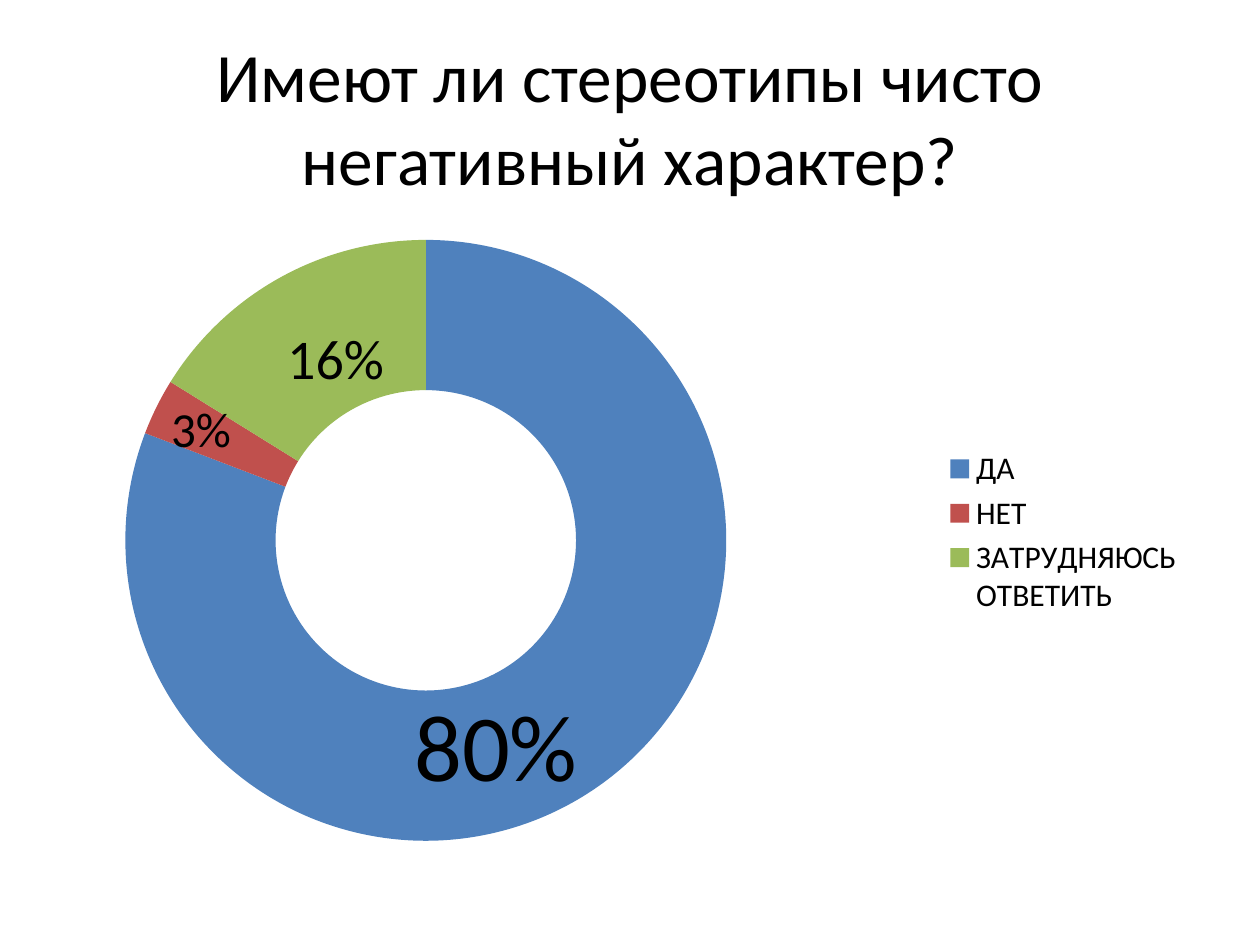
import dataclasses

import pptx
import pptx.chart.data
import pptx.dml.color
import pptx.enum.chart
import pptx.enum.text
import pptx.oxml
import pptx.oxml.ns
import pptx.util

Pt = pptx.util.Pt
RGB = pptx.dml.color.RGBColor.from_string


@dataclasses.dataclass(frozen=True)
class Theme:
    font: str = "Calibri"
    ink: str = "000000"
    yes: str = "4F81BD"
    no: str = "C0504D"
    unsure: str = "9BBB59"
    title_size: float = 39.6
    legend_size: float = 18
    yes_size: float = 54
    no_size: float = 28
    unsure_size: float = 32


@dataclasses.dataclass(frozen=True)
class Box:
    left: float
    top: float
    width: float
    height: float

    def inner(self, left, top, width, height):
        return Box(self.left + left, self.top + top, width, height)

    def lengths(self):
        return [Pt(v) for v in (self.left, self.top, self.width, self.height)]


@dataclasses.dataclass(frozen=True)
class Answer:
    name: str
    percent: int
    color: str
    label_size: float
    label_place: tuple
    label_wraps: bool = False


THEME = Theme()
QUESTION = "Имеют ли стереотипы чисто негативный характер?"
ANSWERS = [
    Answer("ДА", 80, THEME.yes, THEME.yes_size, (193.7, 262.8, 108.7, 72.7)),
    Answer("НЕТ", 3, THEME.no, THEME.no_size, (54.7, 97.9, 49, 41)),
    Answer("ЗАТРУДНЯЮСЬ ОТВЕТИТЬ", 16, THEME.unsure, THEME.unsure_size,
           (121, 55.4, 72.7, 46), True),
]
RING_LAYOUT = {"x": 0.055, "y": 0.031, "w": 0.53, "h": 0.964}


def style_font(font, size):
    font.name = THEME.font
    font.size = Pt(size)
    font.color.rgb = RGB(THEME.ink)


def add_text(paragraph, text, size):
    run = paragraph.add_run()
    run.text = text
    style_font(run.font, size)


def place_title(slide, box):
    question = slide.shapes.title
    question.left, question.top, question.width, question.height = box.lengths()
    frame = question.text_frame
    frame.word_wrap = True
    frame.vertical_anchor = pptx.enum.text.MSO_ANCHOR.MIDDLE
    frame.paragraphs[0].alignment = pptx.enum.text.PP_ALIGN.CENTER
    add_text(frame.paragraphs[0], QUESTION, THEME.title_size)


def set_ring_layout(chart):
    places = "".join(f'<c:{k}Mode val="edge"/>' for k in "xy")
    places += "".join(f'<c:{k} val="{v}"/>' for k, v in RING_LAYOUT.items())
    layout = pptx.oxml.parse_xml(
        f'<c:layout {pptx.oxml.ns.nsdecls("c")}><c:manualLayout>'
        f'<c:layoutTarget val="inner"/>{places}</c:manualLayout></c:layout>')
    plot_area = chart.plots[0]._element.getparent()
    for old in plot_area.findall(pptx.oxml.ns.qn("c:layout")):
        plot_area.remove(old)
    plot_area.insert(0, layout)


def place_ring(slide, box):
    results = pptx.chart.data.CategoryChartData()
    results.categories = [answer.name for answer in ANSWERS]
    results.add_series("Series 1", [answer.percent for answer in ANSWERS])
    chart = slide.shapes.add_chart(
        pptx.enum.chart.XL_CHART_TYPE.DOUGHNUT, *box.lengths(), results).chart
    chart.has_title = False
    style_font(chart.font, THEME.legend_size)
    chart.has_legend = True
    chart.legend.position = pptx.enum.chart.XL_LEGEND_POSITION.RIGHT
    chart.legend.include_in_layout = False
    ring = chart.plots[0]
    ring.vary_by_categories = True
    ring.has_data_labels = False
    for index, answer in enumerate(ANSWERS):
        fill = ring.series[0].points[index].format.fill
        fill.solid()
        fill.fore_color.rgb = RGB(answer.color)
    set_ring_layout(chart)


def place_percent(slide, box, answer):
    frame = slide.shapes.add_textbox(*box.lengths()).text_frame
    frame.word_wrap = answer.label_wraps
    frame.auto_size = pptx.enum.text.MSO_AUTO_SIZE.SHAPE_TO_FIT_TEXT
    add_text(frame.paragraphs[0], f"{answer.percent}%", answer.label_size)


def place_survey(slide, box):
    place_ring(slide, box)
    for answer in reversed(ANSWERS):
        place_percent(slide, box.inner(*answer.label_place), answer)


def main():
    deck = pptx.Presentation()
    deck.slide_width, deck.slide_height = Pt(720), Pt(540)
    slide = deck.slides.add_slide(deck.slide_layouts.get_by_name("Title Only"))
    place_title(slide, Box(36, 21.6, 648, 90))
    place_survey(slide, Box(36, 126, 648, 356.4))
    deck.save("out.pptx")


if __name__ == "__main__":
    main()
